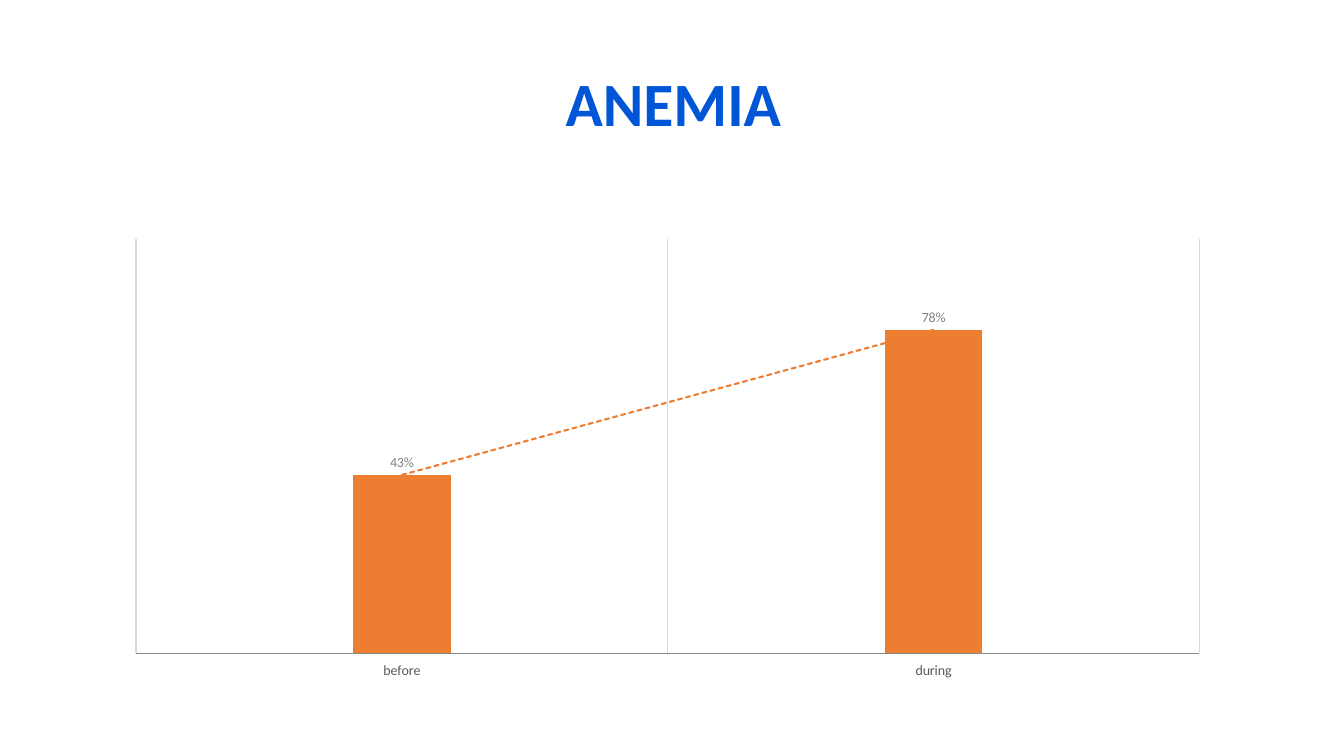
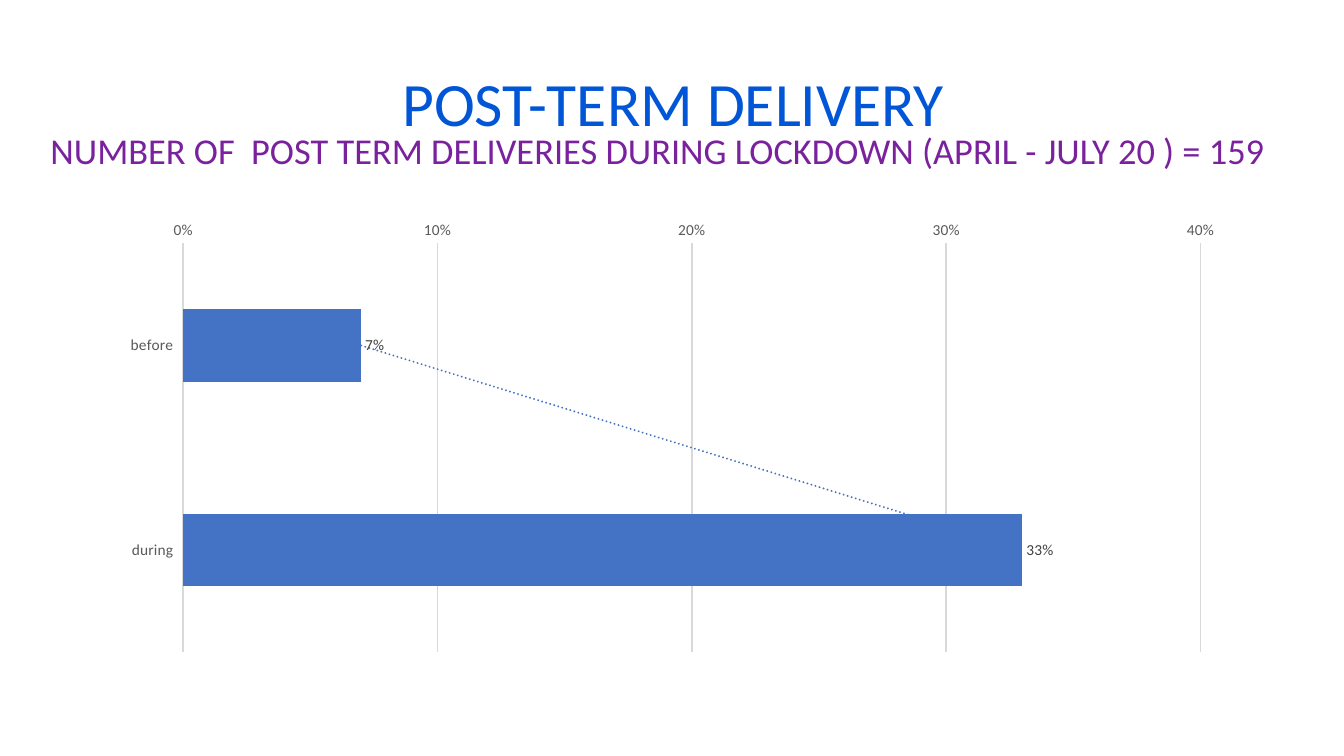
from pptx import Presentation
from pptx.chart.data import CategoryChartData
from pptx.dml.color import RGBColor
from pptx.enum import chart as kinds, text
from pptx.oxml import parse_xml
from pptx.oxml.ns import nsdecls, qn
from pptx.util import Inches, Pt

FONT = "Calibri"
COLOURS = {
    "title": "0056D6", "subtitle": "7A219E", "orange": "ED7D31", "blue": "4472C4",
    "grid": "D9D9D9", "axis": "888888", "axis_text": "595959",
    "grey_label": "808080", "dark_label": "404040", "black": "000000",
}
TITLE_BOX = (1.17, 0.61, 11.02, 1.57)
SUBTITLE_BOX = (0.45, 1.27, 12.29, 0.92)
CATEGORIES = ["before", "during"]

SLIDES = [
    {
        "title": "ANEMIA", "bold": True, "subtitle": None,
        "at": (1.21, 2.2, 10.74, 4.55), "plot": (0.013, 0.037, 0.982, 0.904),
        "kind": kinds.XL_CHART_TYPE.COLUMN_CLUSTERED, "values": [0.43, 0.78],
        "colour": "orange", "dash": "sysDash", "gap": 444, "overlap": -90,
        "size": 10, "label": "grey_label", "axis": "axis",
        "maximum": 1, "step": 0.2, "value_axis_shown": False, "reversed": False,
    },
    {
        "title": "POST-TERM DELIVERY", "bold": False,
        "subtitle": "NUMBER OF  POST TERM DELIVERIES DURING LOCKDOWN (APRIL - JULY 20 ) = 159",
        "at": (1.22, 2.19, 10.85, 4.56), "plot": (0.055, 0.04, 0.93, 0.898),
        "kind": kinds.XL_CHART_TYPE.BAR_CLUSTERED, "values": [0.07, 0.33],
        "colour": "blue", "dash": "sysDot", "gap": 182, "overlap": 0,
        "size": 11, "label": "dark_label", "axis": "grid",
        "maximum": 0.4, "step": 0.1, "value_axis_shown": True, "reversed": True,
    },
]


def rgb(name):
    return RGBColor.from_string(COLOURS[name])


def set_font(font, size, colour, bold=False):
    font.name, font.size, font.bold = FONT, Pt(size), bold
    font.color.rgb = rgb(colour)


def set_line(line, colour, width=1):
    line.color.rgb = rgb(colour)
    line.width = Pt(width)


def add_text(page, at, words, size, colour, bold=False, centred=False, top=0.05, before=0):
    frame = page.shapes.add_textbox(*map(Inches, at)).text_frame
    frame.word_wrap = True
    frame.vertical_anchor = text.MSO_ANCHOR.TOP
    frame.margin_left = frame.margin_right = frame.margin_bottom = Inches(0.05)
    frame.margin_top = Inches(top)
    para = frame.paragraphs[0]
    para.alignment = text.PP_ALIGN.CENTER if centred else text.PP_ALIGN.LEFT
    para.line_spacing = 0.9
    para.space_before = Pt(before)
    span = para.add_run()
    span.text = words
    set_font(span.font, size, colour, bold)


def set_plot_area(chart, fractions):
    area = chart._chartSpace.find(".//" + qn("c:plotArea"))
    for old in area.findall(qn("c:layout")):
        area.remove(old)
    sizes = "".join(f'<c:{key} val="{value}"/>' for key, value in zip("xywh", fractions))
    area.insert(0, parse_xml(
        f'<c:layout {nsdecls("c")}><c:manualLayout><c:layoutTarget val="inner"/>'
        f'<c:xMode val="edge"/><c:yMode val="edge"/>{sizes}</c:manualLayout></c:layout>'))


def add_trend(series, colour, dash):
    series._element.find(qn("c:cat")).addprevious(parse_xml(
        f'<c:trendline {nsdecls("c", "a")}><c:spPr><a:ln w="{Pt(1.5)}" cap="rnd"><a:solidFill>'
        f'<a:srgbClr val="{COLOURS[colour]}"/></a:solidFill><a:prstDash val="{dash}"/></a:ln></c:spPr>'
        '<c:trendlineType val="linear"/><c:dispRSqr val="0"/><c:dispEq val="0"/></c:trendline>'))


def style_axes(chart, item):
    names, scale = chart.category_axis, chart.value_axis
    for axis in (names, scale):
        axis.major_tick_mark = axis.minor_tick_mark = kinds.XL_TICK_MARK.NONE
        set_font(axis.tick_labels.font, item["size"], "axis_text")
    names.tick_label_position = kinds.XL_TICK_LABEL_POSITION.LOW
    set_line(names.format.line, item["axis"])
    names.reverse_order = item["reversed"]
    if item["reversed"]:
        names.crosses = kinds.XL_AXIS_CROSSES.MAXIMUM
    scale.minimum_scale, scale.maximum_scale = 0, item["maximum"]
    scale.major_unit = item["step"]
    scale.tick_labels.number_format = "0%"
    scale.tick_labels.number_format_is_linked = False
    scale.format.line.fill.background()
    shown = item["value_axis_shown"]
    if not shown:
        scale.tick_label_position = kinds.XL_TICK_LABEL_POSITION.NONE
    names.has_major_gridlines, scale.has_major_gridlines = not shown, shown
    set_line((scale if shown else names).major_gridlines.format.line, "grid")


def add_bars(page, item):
    data = CategoryChartData(number_format="0%")
    data.categories = CATEGORIES
    data.add_series("Series 1", item["values"])
    chart = page.shapes.add_chart(item["kind"], *map(Inches, item["at"]), data).chart
    chart.has_legend = chart.has_title = False
    set_font(chart.font, 10, "black")
    set_plot_area(chart, item["plot"])
    style_axes(chart, item)

    plot = chart.plots[0]
    plot.vary_by_categories = False
    plot.gap_width, plot.overlap = item["gap"], item["overlap"]
    series = plot.series[0]
    series.invert_if_negative = False
    series.format.fill.solid()
    series.format.fill.fore_color.rgb = rgb(item["colour"])
    labels = series.data_labels
    labels.show_value = True
    labels.position = kinds.XL_LABEL_POSITION.OUTSIDE_END
    labels.number_format, labels.number_format_is_linked = "0%", False
    set_font(labels.font, item["size"], item["label"])
    add_trend(series, item["colour"], item["dash"])


def main():
    deck = Presentation()
    deck.slide_width, deck.slide_height = Inches(13.33), Inches(7.5)
    for item in SLIDES:
        page = deck.slides.add_slide(deck.slide_layouts[6])
        add_text(page, TITLE_BOX, item["title"], 44, "title", item["bold"], centred=True, top=0.12)
        add_bars(page, item)
        if item["subtitle"]:
            add_text(page, SUBTITLE_BOX, item["subtitle"], 26, "subtitle", before=10)
    deck.save("out.pptx")


if __name__ == "__main__":
    main()
